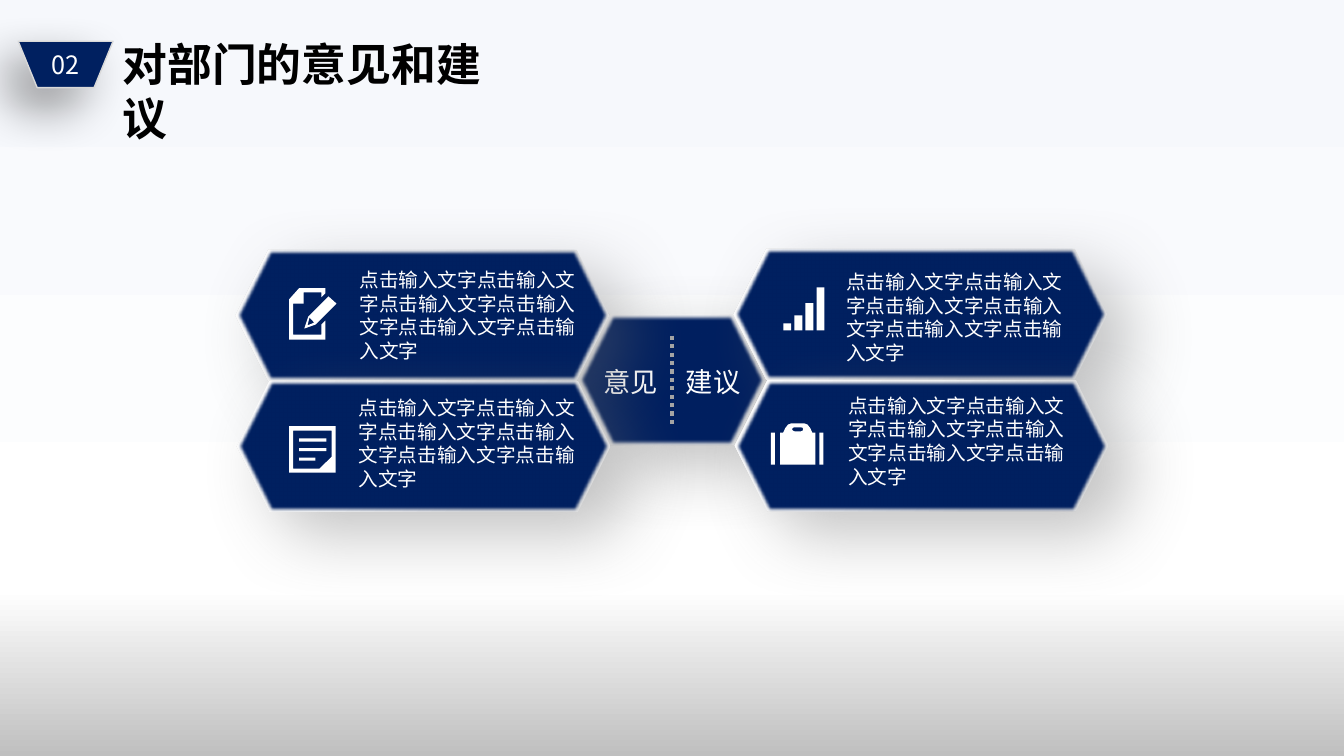
from pptx import Presentation
from pptx.dml.color import RGBColor
from pptx.enum.dml import MSO_LINE
from pptx.enum.shapes import MSO_CONNECTOR, MSO_SHAPE
from pptx.enum.text import MSO_ANCHOR, MSO_AUTO_SIZE, PP_ALIGN
from pptx.oxml import parse_xml
from pptx.util import Cm, Pt

HEXAGON = MSO_SHAPE.HEXAGON
RECTANGLE = MSO_SHAPE.RECTANGLE
TRAPEZOID = MSO_SHAPE.FLOWCHART_MANUAL_OPERATION
STRAIGHT = MSO_CONNECTOR.STRAIGHT
DOTTED = MSO_LINE.ROUND_DOT
GROW = MSO_AUTO_SIZE.SHAPE_TO_FIT_TEXT
MIDDLE = MSO_ANCHOR.MIDDLE
LEFT = PP_ALIGN.LEFT
CENTER = PP_ALIGN.CENTER

NAVY = RGBColor(0x00, 0x20, 0x60)
WHITE = RGBColor(0xFF, 0xFF, 0xFF)
BLACK = RGBColor(0x00, 0x00, 0x00)
GRAY = RGBColor(0xA6, 0xA6, 0xA6)
LIGHT_GRAY = RGBColor(0xD9, 0xD9, 0xD9)
SHADOW_GRAY = RGBColor(0x69, 0x69, 0x69)
BACKGROUND_STOPS = [
    (0, RGBColor(0xF6, 0xF8, 0xFC)),
    (78, WHITE),
    (100, RGBColor(0xBF, 0xBF, 0xBF)),
]
RIM_STOPS = [
    (1, RGBColor(0xDE, 0xDE, 0xDE)),
    (30, RGBColor(0xE0, 0xE0, 0xE0)),
    (61, RGBColor(0xF6, 0xF6, 0xF6)),
    (100, WHITE),
]

SANS = "Noto Sans CJK SC"
CONDENSED = "Roboto Condensed"
NAMESPACE = 'xmlns:a="http://schemas.openxmlformats.org/drawingml/2006/main"'
BODY = "点击输入文字" * 6

PANELS = [(5.94, 6.3), (18.49, 6.27), (5.97, 9.6), (18.52, 9.58)]
BODY_POSITIONS = [(8.81, 6.63), (21.08, 6.68), (8.79, 9.86), (21.13, 9.8)]

PAGE = [
    (8.1, 8.43), (7.39, 8.43), (7.39, 7.65), (7.65, 7.65), (7.65, 7.37),
    (8.1, 7.37), (8.1, 7.49), (8.2, 7.39), (8.2, 7.26), (7.54, 7.26),
    (7.29, 7.54), (7.29, 8.56), (8.2, 8.56), (8.2, 8.08), (8.1, 8.18),
]
PENCIL = [(7.77, 7.98), (7.67, 8.28), (7.95, 8.18), (8.48, 7.65), (8.28, 7.47)]
PENCIL_TIP = [(7.92, 8.13), (7.75, 8.2), (7.8, 8)]
NOTE = [(7.29, 10.74), (8.46, 10.74), (8.46, 11.91), (7.29, 11.91)]
NOTE_INSIDE = [
    (7.39, 10.85), (8.36, 10.85), (8.36, 11.51), (8.05, 11.81), (7.39, 11.81),
]
SUITCASE = [
    (20.47, 10.9), (20.42, 10.79), (20.35, 10.7), (20.27, 10.67),
    (19.94, 10.67), (19.86, 10.7), (19.79, 10.79), (19.74, 10.9),
    (19.66, 10.9), (19.66, 11.71), (20.55, 11.71), (20.55, 10.9),
]
SUITCASE_HANDLE = [
    (20.19, 10.87), (20.02, 10.87), (19.98, 10.85), (19.96, 10.82),
    (19.98, 10.78), (20.02, 10.77), (20.19, 10.77), (20.23, 10.78),
    (20.24, 10.82), (20.23, 10.85),
]


def set_gradient(fill, element, stops, angle):
    fill.gradient()
    fill.gradient_angle = angle
    stop_list = element.xpath(".//a:gsLst")[0]
    for stop in list(stop_list):
        stop_list.remove(stop)
    for position, color in stops:
        stop_list.append(parse_xml(
            f'<a:gs {NAMESPACE} pos="{position * 1000}">'
            f'<a:srgbClr val="{color}"/></a:gs>'))


def add_effect(shape, xml):
    shape.element.xpath(".//a:effectLst")[0].append(parse_xml(xml))


def add_shadow(shape, color, blur, distance, direction):
    add_effect(shape, (
        f'<a:outerShdw {NAMESPACE} blurRad="{Pt(blur)}" dist="{Pt(distance)}" '
        f'dir="{direction * 60000}" algn="ctr" rotWithShape="0">'
        f'<a:srgbClr val="{color}"><a:alpha val="40000"/></a:srgbClr>'
        '</a:outerShdw>'))


def paint(shape, color):
    shape.shadow.inherit = False
    shape.fill.solid()
    shape.fill.fore_color.rgb = color
    shape.line.fill.background()


def add_block(slide, kind, left, top, width, height, color):
    shape = slide.shapes.add_shape(kind, Cm(left), Cm(top), Cm(width), Cm(height))
    paint(shape, color)
    return shape


def add_outline(slide, *contours):
    first, *others = [[(Cm(x), Cm(y)) for x, y in contour] for contour in contours]
    builder = slide.shapes.build_freeform(*first[0])
    builder.add_line_segments(first[1:], close=True)
    for contour in others:
        builder.move_to(*contour[0])
        builder.add_line_segments(contour[1:], close=True)
    paint(builder.convert_to_shape(), WHITE)


def write(frame, text, size, color=WHITE, font_name=SANS, align=LEFT, bold=False):
    paragraph = frame.paragraphs[0]
    paragraph.text = text
    paragraph.alignment = align
    font = paragraph.font
    font.size = Pt(size)
    font.bold = bold
    font.color.rgb = color
    font.name = font_name
    latin = paragraph._p.xpath(".//a:latin")[0]
    latin.addnext(parse_xml(f'<a:ea {NAMESPACE} typeface="{font_name}"/>'))


def add_text(slide, left, top, width, height, text, size, **style):
    box = slide.shapes.add_textbox(Cm(left), Cm(top), Cm(width), Cm(height))
    box.text_frame.word_wrap = True
    box.text_frame.auto_size = GROW
    write(box.text_frame, text, size, **style)


def add_panel(slide, left, top, width):
    rim = add_block(slide, HEXAGON, left, top, width, 3.3, WHITE)
    set_gradient(rim.fill, rim.element, RIM_STOPS, 135)
    add_shadow(rim, SHADOW_GRAY, 49, 25, 40)
    face = add_block(slide, HEXAGON, left, top, width, 3.3, NAVY)
    add_effect(face, f'<a:softEdge {NAMESPACE} rad="{Pt(2.5)}"/>')


def add_header(slide):
    add_text(slide, 2.84, 0.81, 10.67, 1.63, "对部门的意见和建议", 32,
             color=BLACK, bold=True)
    badge = add_block(slide, TRAPEZOID, 0.46, 1.04, 2.39, 1.17, NAVY)
    badge.line.color.rgb = LIGHT_GRAY
    badge.line.width = Pt(1)
    add_shadow(badge, BLACK, 35, 20, 135)
    badge.text_frame.vertical_anchor = MIDDLE
    write(badge.text_frame, "02", 18, align=CENTER)


def add_hub(slide):
    add_panel(slide, 14.55, 7.92, 4.78)
    divider = slide.shapes.add_connector(
        STRAIGHT, Cm(16.94), Cm(8.46), Cm(16.94), Cm(10.72))
    divider.line.color.rgb = GRAY
    divider.line.width = Pt(3)
    divider.line.dash_style = DOTTED
    divider.element.xpath("p:spPr")[0].append(
        parse_xml(f"<a:effectLst {NAMESPACE}/>"))
    for left, label in [(14.66, "意见"), (16.74, "建议")]:
        add_text(slide, left, 9.07, 2.46, 1.09, label, 19.5,
                 font_name=CONDENSED, align=CENTER)


def add_icons(slide):
    add_outline(slide, PAGE)
    add_outline(slide, PENCIL, PENCIL_TIP)
    for index, height in enumerate([0.18, 0.38, 0.69, 1.09]):
        add_block(slide, RECTANGLE, 19.74 + 0.28 * index, 8.33 - height,
                  0.2, height, WHITE)
    add_outline(slide, NOTE, NOTE_INSIDE)
    for index, width in enumerate([0.69, 0.69, 0.41]):
        add_block(slide, RECTANGLE, 7.54, 11.05 + 0.24 * index, width, 0.08, WHITE)
    add_outline(slide, SUITCASE, SUITCASE_HANDLE)
    for left in (19.43, 20.65):
        add_block(slide, RECTANGLE, left, 10.9, 0.1, 0.81, WHITE)


def main():
    presentation = Presentation()
    presentation.slide_width = Cm(33.87)
    presentation.slide_height = Cm(19.05)
    slide = presentation.slides.add_slide(presentation.slide_layouts[6])
    set_gradient(slide.background.fill, slide.element, BACKGROUND_STOPS, 270)
    add_header(slide)
    add_hub(slide)
    for left, top in PANELS:
        add_panel(slide, left, top, 9.42)
    add_icons(slide)
    for left, top in BODY_POSITIONS:
        add_text(slide, left, top, 6.43, 2.64, BODY, 14)
    presentation.save("out.pptx")


if __name__ == "__main__":
    main()
